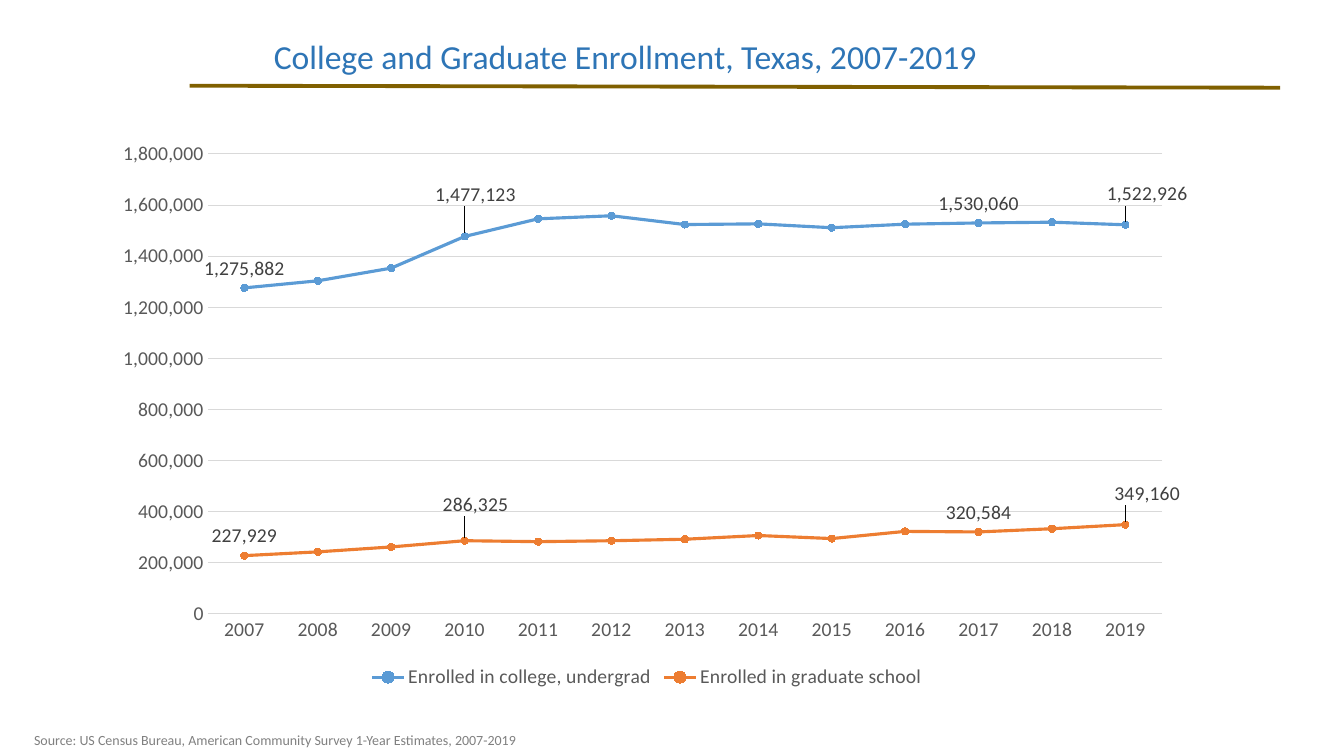
from typing import NamedTuple

from lxml import etree
from pptx import Presentation
from pptx import util as u
from pptx.chart import data as chart_data
from pptx.dml.color import RGBColor
from pptx.enum import chart as charts, shapes, text
from pptx.oxml import parse_xml
from pptx.oxml.ns import nsdecls, qn

FONT = "Calibri"
COLORS = {
    "rule": "806000", "title": "2E75B6", "source": "808080",
    "axis": "595959", "label": "404040", "grid": "D9D9D9",
    "college": "5B9BD5", "graduate": "ED7D31",
}
C15_URI = "http://schemas.microsoft.com/office/drawing/2012/chart"


class Caption(NamedTuple):
    words: str
    left: float
    top: float
    width: float
    height: float
    size: int
    color: str
    anchor: text.MSO_ANCHOR


class Enrollment(NamedTuple):
    name: str
    color: str
    values: tuple[int, ...]
    # Labelled point -> label shift as a share of the chart's width and height
    labels: dict[int, tuple[float, float]]


CAPTIONS = (
    Caption("College and Graduate Enrollment, Texas, 2007-2019",
            6.65, 0.05, 21.54, 2.72, 24, "title", text.MSO_ANCHOR.MIDDLE),
    Caption("Source: US Census Bureau, American Community Survey 1-Year Estimates, 2007-2019",
            0.61, 18.31, 17.78, 0.69, 10, "source", text.MSO_ANCHOR.TOP),
)
YEARS = [str(year) for year in range(2007, 2020)]
ENROLLMENTS = (
    Enrollment("Enrolled in college, undergrad", "college",
               (1275882, 1303492, 1353185, 1477123, 1546122, 1558096, 1523860,
                1526401, 1511378, 1525151, 1530060, 1532999, 1522926),
               {0: (0, 0), 3: (0.01, -0.04), 10: (0, 0), 12: (0.02, -0.02)}),
    Enrollment("Enrolled in graduate school", "graduate",
               (227929, 242628, 261930, 286325, 282528, 286125, 292064,
                306680, 294710, 322757, 320584, 333138, 349160),
               {0: (0, 0), 3: (0.01, -0.03), 10: (0, 0), 12: (0.02, -0.02)}),
)


def rgb(name: str) -> RGBColor:
    return RGBColor.from_string(COLORS[name])


def style_font(font, size: int, color: str) -> None:
    font.name = FONT
    font.size = u.Pt(size)
    font.color.rgb = rgb(color)


def style_line(line, width: float, color: str) -> None:
    line.width = u.Pt(width)
    line.color.rgb = rgb(color)


def manual_layout(**settings):
    children = "".join(f'<c:{tag} val="{value}"/>' for tag, value in settings.items())
    return parse_xml(f"<c:layout {nsdecls('c')}><c:manualLayout>{children}"
                     "</c:manualLayout></c:layout>")


def add_caption(slide, caption: Caption) -> None:
    box = slide.shapes.add_textbox(u.Cm(caption.left), u.Cm(caption.top),
                                   u.Cm(caption.width), u.Cm(caption.height))
    frame = box.text_frame
    frame.word_wrap = True
    frame.vertical_anchor = caption.anchor
    paragraph = frame.paragraphs[0]
    paragraph.text = caption.words
    style_font(paragraph.font, caption.size, caption.color)


def style_series(series, enrollment: Enrollment) -> None:
    series.smooth = False
    style_line(series.format.line, 2.25, enrollment.color)
    marker = series.marker
    marker.style = charts.XL_MARKER_STYLE.CIRCLE
    marker.size = 5
    marker.format.fill.solid()
    marker.format.fill.fore_color.rgb = rgb(enrollment.color)
    style_line(marker.format.line, 0.75, enrollment.color)

    # Labels on chosen years only, some moved away with leader lines
    series.data_labels.show_value = False
    for index, (x, y) in enrollment.labels.items():
        label = series.points[index].data_label
        style_font(label.font, 14, "label")
        label.position = charts.XL_LABEL_POSITION.ABOVE
    all_labels = series.data_labels._element
    for element in all_labels.findall(qn("c:dLbl")):
        index_element = element.find(qn("c:idx"))
        x, y = enrollment.labels[int(index_element.get("val"))]
        if x or y:
            index_element.addnext(manual_layout(x=x, y=y))
    extensions = etree.SubElement(all_labels, qn("c:extLst"))
    extension = etree.SubElement(extensions, qn("c:ext"), nsmap={"c15": C15_URI},
                                 uri="{CE6537A1-D6FC-4f65-9D91-7224C49458BB}")
    etree.SubElement(extension, f"{{{C15_URI}}}showLeaderLines", val="1")


def add_enrollment_chart(slide) -> None:
    data = chart_data.CategoryChartData(number_format="#,##0")
    data.categories = YEARS
    for enrollment in ENROLLMENTS:
        data.add_series(enrollment.name, enrollment.values)
    chart = slide.shapes.add_chart(
        charts.XL_CHART_TYPE.LINE_MARKERS,
        u.Cm(2.57), u.Cm(3.3), u.Cm(27.46), u.Cm(14.17), data).chart
    chart.has_title = False
    style_font(chart.font, 14, "axis")
    chart.plots[0].vary_by_categories = False
    for series, enrollment in zip(chart.plots[0].series, ENROLLMENTS):
        style_series(series, enrollment)

    # Axes
    for axis in (chart.category_axis, chart.value_axis):
        axis.major_tick_mark = axis.minor_tick_mark = charts.XL_TICK_MARK.NONE
        style_font(axis.tick_labels.font, 14, "axis")
    style_line(chart.category_axis.format.line, 0.75, "grid")
    value_axis = chart.value_axis
    value_axis.minimum_scale, value_axis.maximum_scale = 0, 1800000
    value_axis.major_unit = 200000
    value_axis.format.line.fill.background()
    value_axis.tick_labels.number_format = "#,##0"
    value_axis.tick_labels.number_format_is_linked = False
    style_line(value_axis.major_gridlines.format.line, 0.75, "grid")

    # Legend
    chart.has_legend = True
    chart.legend.position = charts.XL_LEGEND_POSITION.BOTTOM
    chart.legend.include_in_layout = False
    style_font(chart.legend.font, 14, "axis")

    # Plot area position
    plot_area = chart._chartSpace.chart.plotArea
    for layout in plot_area.findall(qn("c:layout")):
        plot_area.remove(layout)
    plot_area.insert(0, manual_layout(layoutTarget="inner", xMode="edge", yMode="edge",
                                      x=0.097, y=0.041, w=0.876, h=0.818))


def main() -> None:
    presentation = Presentation()
    presentation.slide_width, presentation.slide_height = u.Cm(33.87), u.Cm(19.05)
    slide = presentation.slides.add_slide(presentation.slide_layouts[6])

    # Rule under the title
    rule = slide.shapes.add_connector(shapes.MSO_CONNECTOR.STRAIGHT,
                                      u.Cm(4.78), u.Cm(2.16), u.Cm(32.26), u.Cm(2.21))
    style_line(rule.line, 2.75, "rule")
    etree.SubElement(rule._element.spPr, qn("a:effectLst"))

    # Chart, title and source
    add_enrollment_chart(slide)
    for caption in CAPTIONS:
        add_caption(slide, caption)
    presentation.save("out.pptx")


if __name__ == "__main__":
    main()
